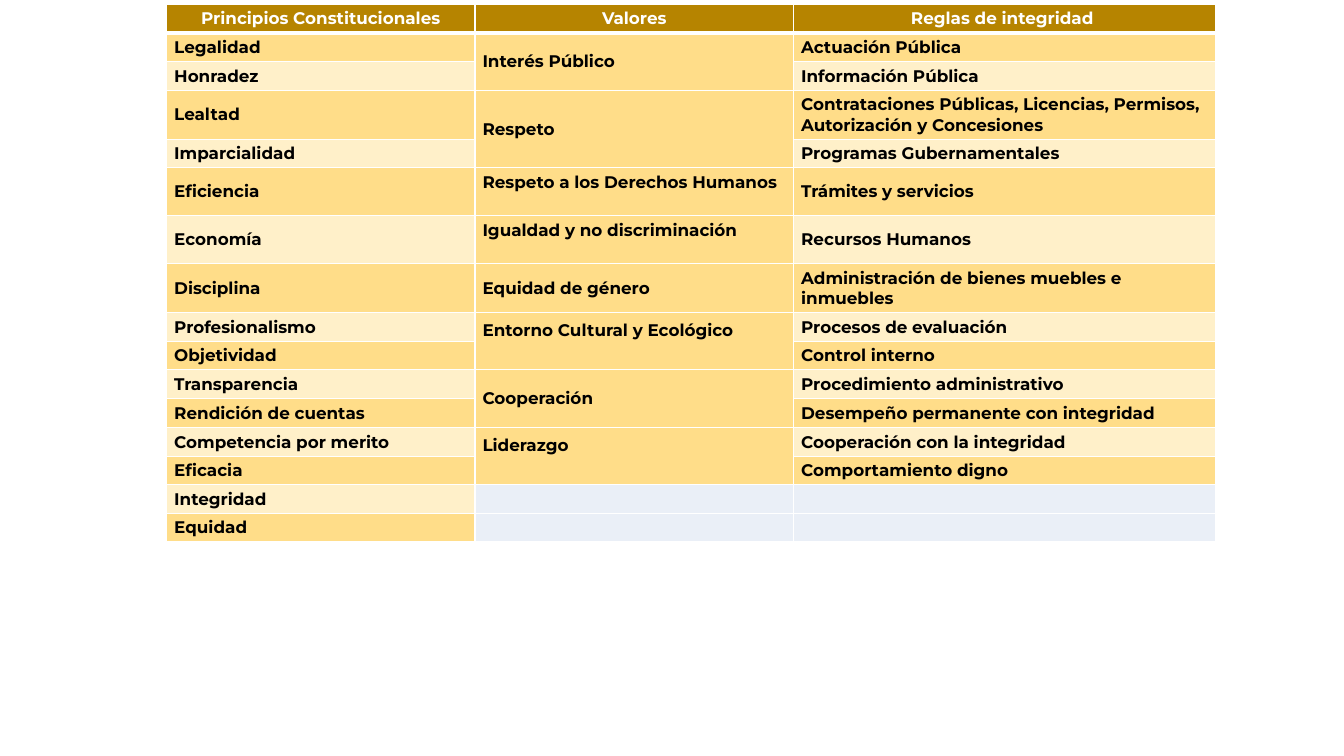
from lxml.etree import SubElement
from pptx import Presentation
from pptx.dml.color import RGBColor
from pptx.enum.text import MSO_ANCHOR, PP_ALIGN
from pptx.oxml.ns import qn
from pptx.util import Cm, Pt

HEADER, DARK, LIGHT, EMPTY = "B68400", "FFDD89", "FFF0C9", "EAEFF7"
WHITE, BLACK = "FFFFFF", "000000"
FONT_SIZE = 12
COLUMN_WIDTHS = [7.77, 8.03, 10.64]
ROW_HEIGHT, TALL_ROW, LOOSE_ROW = 0.7, 1.21, 0.74

HEADINGS = ["Principios Constitucionales", "Valores", "Reglas de integridad "]
PRINCIPLES = [
    "Legalidad", "Honradez", "Lealtad", "Imparcialidad", "Eficiencia",
    "Economía", "Disciplina", "Profesionalismo", "Objetividad",
    "Transparencia", "Rendición de cuentas", "Competencia por merito",
    "Eficacia", "Integridad", "Equidad",
]
RULES = [
    "Actuación Pública", "Información Pública",
    "Contrataciones Públicas, Licencias, Permisos, Autorización y Concesiones",
    "Programas Gubernamentales", "Trámites y servicios", "Recursos Humanos",
    "Administración de bienes muebles e inmuebles", "Procesos de evaluación",
    "Control interno", "Procedimiento administrativo",
    "Desempeño permanente con integridad", "Cooperación con la integridad",
    "Comportamiento digno", "", "",
]
# Value, rows it covers, top margin in cm when the text sits at the top
VALUES = [
    ("Interés Público", 2, None), ("Respeto", 2, None),
    ("Respeto a los Derechos Humanos", 1, 0.1),
    ("Igualdad y no discriminación", 1, 0.1),
    ("Equidad de género", 1, None),
    ("Entorno Cultural y Ecológico", 2, 0.18),
    ("Cooperación", 2, None), ("Liderazgo", 2, 0.2),
    ("", 1, None), ("", 1, None),
]
ROW_HEIGHTS = {0: LOOSE_ROW, 3: TALL_ROW, 5: TALL_ROW, 6: TALL_ROW,
               7: TALL_ROW, 11: LOOSE_ROW}


def color(value):
    return RGBColor.from_string(value)


def set_borders(cell, row):
    """White lines, thicker between the heading and the first row."""
    properties = cell._tc.get_or_add_tcPr()
    widths = {"lnL": 1, "lnR": 1, "lnT": 3 if row == 1 else 1,
              "lnB": 3 if row == 0 else 1}
    for tag, width in widths.items():
        line = SubElement(properties, qn("a:" + tag), w=str(Pt(width)))
        fill = SubElement(line, qn("a:solidFill"))
        SubElement(fill, qn("a:srgbClr"), val=WHITE)


def format_cell(cell, row, fill):
    set_borders(cell, row)
    cell.fill.solid()
    cell.fill.fore_color.rgb = color(fill)
    settings = {"margin_left": Cm(0.19), "margin_right": Cm(0.19),
                "margin_top": Cm(0.1), "margin_bottom": Cm(0.1),
                "vertical_anchor": MSO_ANCHOR.MIDDLE}
    for name, value in settings.items():
        setattr(cell, name, value)


def write_cell(cell, text, ink=BLACK, align=PP_ALIGN.LEFT):
    para = cell.text_frame.paragraphs[0]
    para.alignment = align
    if not text:
        # Keeps an empty row as low as the others
        SubElement(para._p, qn("a:endParaRPr"), sz=str(FONT_SIZE * 100))
        return
    span = para.add_run()
    span.text = text
    settings = {"name": "Montserrat", "size": Pt(FONT_SIZE), "bold": True}
    for name, value in settings.items():
        setattr(span.font, name, value)
    span.font.color.rgb = color(ink)


def fill_color(row, column, text):
    if row == 0:
        return HEADER
    if column == 1:
        return EMPTY if row > len(PRINCIPLES) - 2 else DARK
    if not text:
        return EMPTY
    return DARK if row % 2 else LIGHT


def add_principles_table(page, left, top):
    row_count = len(PRINCIPLES) + 1
    heights = [ROW_HEIGHTS.get(row, ROW_HEIGHT) for row in range(row_count)]
    frame = page.shapes.add_table(row_count, len(COLUMN_WIDTHS), Cm(left), Cm(top),
                                  Cm(sum(COLUMN_WIDTHS)), Cm(sum(heights)))
    table = frame.table
    table.horz_banding = False
    for column, width in zip(table.columns, COLUMN_WIDTHS):
        column.width = Cm(width)
    for row, height in zip(table.rows, heights):
        row.height = Cm(height)

    # Headings, principles and rules; the value column is only coloured here
    rows = [HEADINGS] + [[name, "", rule] for name, rule in zip(PRINCIPLES, RULES)]
    for row, texts in enumerate(rows):
        for column, text in enumerate(texts):
            cell = table.cell(row, column)
            format_cell(cell, row, fill_color(row, column, text))
            if row == 0:
                write_cell(cell, text, WHITE, PP_ALIGN.CENTER)
            elif column != 1:
                write_cell(cell, text)

    # Values, some of them across two rows
    row = 1
    for text, covered, top_margin in VALUES:
        cell = table.cell(row, 1)
        if covered > 1:
            cell.merge(table.cell(row + covered - 1, 1))
        write_cell(cell, text)
        if top_margin is not None:
            cell.vertical_anchor = MSO_ANCHOR.TOP
            cell.margin_top = Cm(top_margin)
        row += covered


def main():
    deck = Presentation()
    deck.slide_width, deck.slide_height = Cm(33.87), Cm(19.05)
    page = deck.slides.add_slide(deck.slide_layouts[6])
    add_principles_table(page, 4.2, 0.1)
    deck.save("out.pptx")


if __name__ == "__main__":
    main()
